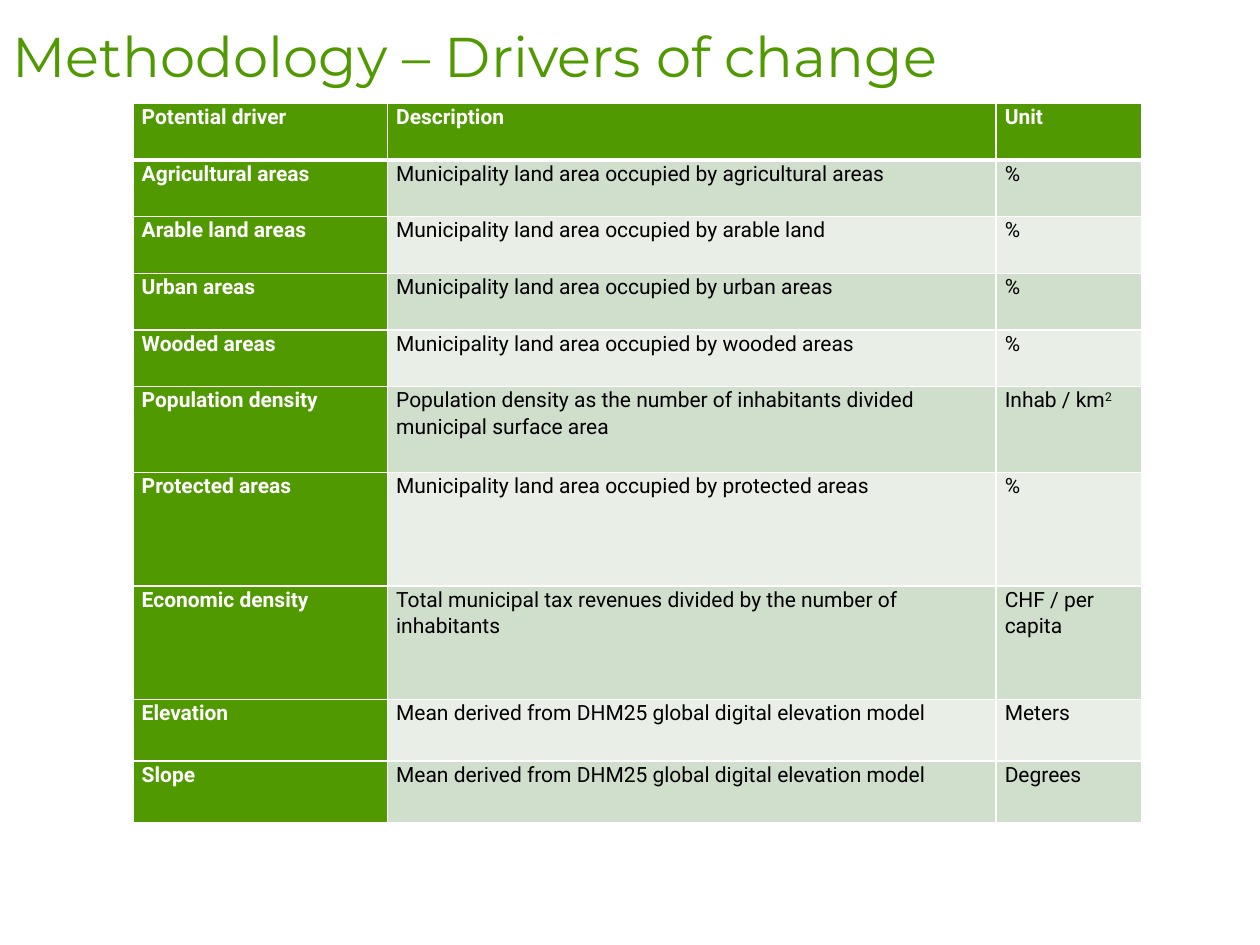
import pptx
import pptx.dml.color
import pptx.oxml
import pptx.oxml.ns
import pptx.util

Pt = pptx.util.Pt

GREEN, WHITE, BLACK = "509901", "FFFFFF", "000000"
BANDS = ("D0DECC", "E9EFE7")

COLUMNS = (145.4, 347.8, 83.5)
ROW_HEIGHTS = (32.4,) * 5 + (49, 64.8, 64.8, 35.3, 35.3)
LAND = "Municipality land area occupied by "
ELEVATION_MODEL = "Mean derived from DHM25 global digital elevation model"
DRIVERS = (
    ("Potential driver", "Description", "Unit"),
    ("Agricultural areas", LAND + "agricultural areas", "%"),
    ("Arable land areas", LAND + "arable land", "%"),
    ("Urban areas", LAND + "urban areas", "%"),
    ("Wooded areas", LAND + "wooded areas", "%"),
    ("Population density",
     "Population density as the number of inhabitants divided municipal surface area",
     "Inhab / km^2"),
    ("Protected areas", LAND + "protected areas", "%"),
    ("Economic density",
     "Total municipal tax revenues divided by the number of inhabitants",
     "CHF / per capita"),
    ("Elevation", ELEVATION_MODEL, "Meters"),
    ("Slope", ELEVATION_MODEL, "Degrees"),
)


def rgb(color):
    return pptx.dml.color.RGBColor.from_string(color)


class Deck:
    """Holds the fonts and the current slide."""

    title_font, body_font = "Montserrat", "Roboto"

    def __init__(self, prs):
        self.s = prs.slides.add_slide(prs.slide_layouts[6])

    def run(self, p, text, font, size, color, bold=False):
        r = p.add_run()
        r.text = text
        r.font.name, r.font.size, r.font.bold = font, Pt(size), bold
        r.font.color.rgb = rgb(color)
        return r

    def title(self, text, left, top, width, height):
        sp = self.s.shapes.add_textbox(Pt(left), Pt(top), Pt(width), Pt(height))
        tf = sp.text_frame
        tf.word_wrap = True
        tf.margin_top = Pt(4.5)
        self.run(tf.paragraphs[0], text, self.title_font, 32, GREEN)

    def border(self, cell, side, width):
        cell._tc.get_or_add_tcPr().append(pptx.oxml.parse_xml(
            f'<a:ln{side} {pptx.oxml.ns.nsdecls("a")} w="{Pt(width)}">'
            f'<a:solidFill><a:srgbClr val="{WHITE}"/></a:solidFill></a:ln{side}>'))

    def cell(self, cell, text, row, col):
        """Fill one cell; a ^ in the text starts a superscript."""
        heading = row == 0 or col == 0
        cell.margin_left = cell.margin_right = Pt(5)
        cell.margin_top = cell.margin_bottom = 0
        widths = {"L": 1, "R": 1, "T": 3 if row == 1 else 1, "B": 3 if row == 0 else 1}
        for side, width in widths.items():
            self.border(cell, side, width)
        cell.fill.solid()
        cell.fill.fore_color.rgb = rgb(GREEN if heading else BANDS[(row - 1) % 2])
        p = cell.text_frame.paragraphs[0]
        p.line_spacing = 1.07
        for i, part in enumerate(text.split("^")):
            r = self.run(p, part, self.body_font, 12, WHITE if heading else BLACK, heading)
            if i:
                r.font._element.set("baseline", "30000")

    def table(self, rows, left, top, widths, heights):
        table = self.s.shapes.add_table(
            len(rows), len(widths), Pt(left), Pt(top),
            Pt(sum(widths)), Pt(sum(heights))).table
        for column, width in zip(table.columns, widths):
            column.width = Pt(width)
        for i, (row, height) in enumerate(zip(rows, heights)):
            table.rows[i].height = Pt(height)
            for j, text in enumerate(row):
                self.cell(table.cell(i, j), text, i, j)


def main():
    prs = pptx.Presentation()
    prs.slide_width, prs.slide_height = Pt(720), Pt(540)
    deck = Deck(prs)
    deck.title("Methodology – Drivers of change", 0, 8, 720, 448)
    deck.table(DRIVERS, 76, 59, COLUMNS, ROW_HEIGHTS)
    prs.save("out.pptx")


if __name__ == "__main__":
    main()
